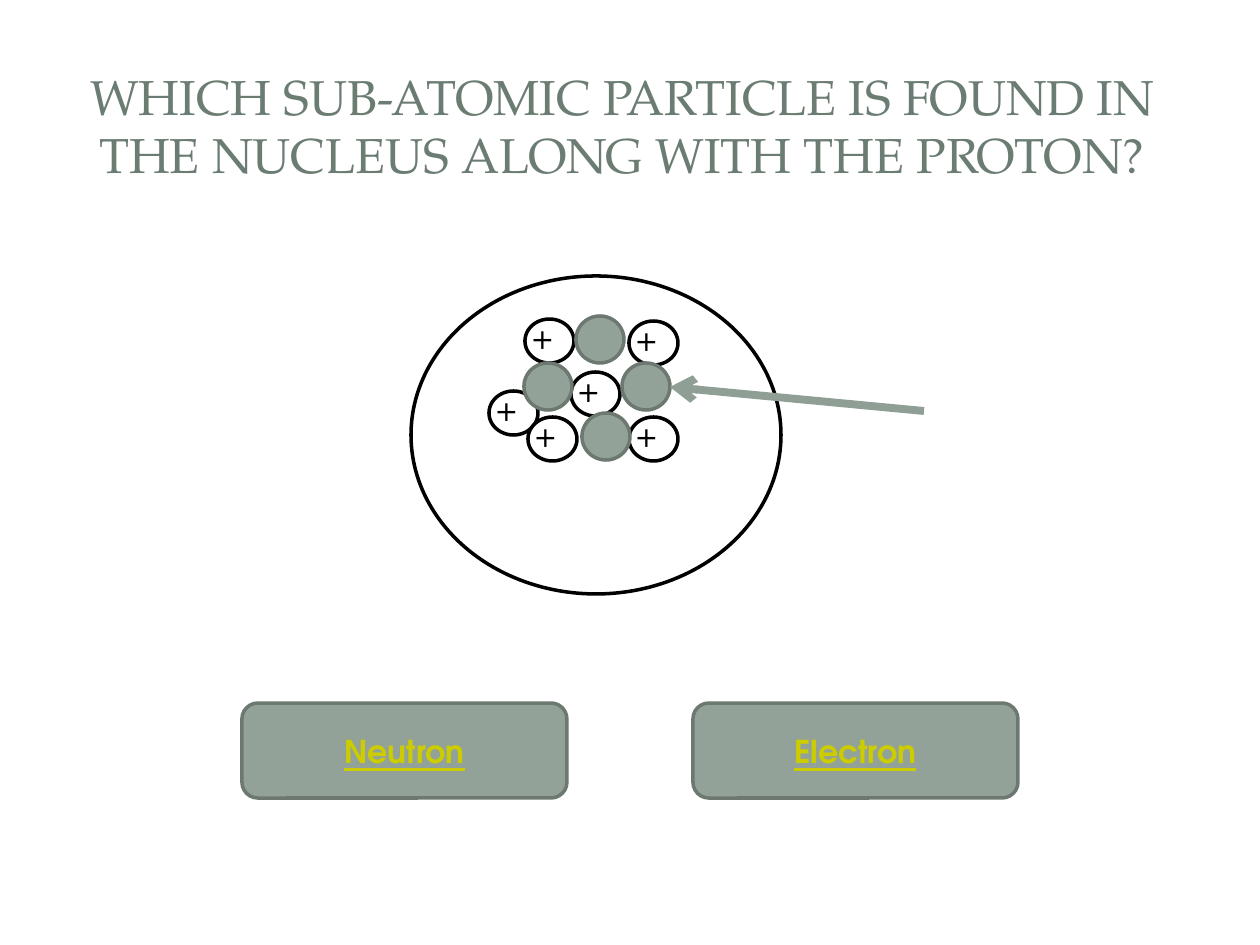
from pptx import Presentation
from pptx.dml.color import RGBColor as RGB
from pptx.enum.shapes import MSO_CONNECTOR as LINE, MSO_SHAPE as SHAPE
from pptx.enum.text import MSO_ANCHOR as ANCHOR, PP_ALIGN as ALIGN
from pptx.oxml.ns import qn
from pptx.util import Emu, Pt
from lxml.etree import SubElement as Sub

TITLE = "WHICH SUB-ATOMIC PARTICLE IS FOUND IN THE NUCLEUS ALONG WITH THE PROTON?"
ANSWERS = ["Neutron", "Electron"]
HEAD, BODY = "TeX Gyre Pagella", "TeX Gyre Adventor"
COLORS = {"white": "FFFFFF", "black": "000000", "title": "6B7D72", "sage": "93A299",
          "edge": "6D7871", "arrow": "8F9F96", "link": "CCCC00"}

# All lengths are px, 126 to the inch
ATOM = (411, 276, 370, 318)
PROTON = (49, 44)
PROTONS = [(571, 372), (629, 417), (489, 391), (528, 417), (629, 321), (525, 319)]
NEUTRON = (48, 47)
NEUTRONS = [(622, 363), (524, 363), (576, 316), (582, 413)]
ARROW = (924, 411, 670, 387)
BUTTON = (325, 95)
LEFT, TOP, STEP = 242, 703, 451


def px(n):
    return Emu(n * 914400 // 126)


def tint(color):
    return RGB.from_string(COLORS[color])


def write(shape, text, font=BODY, size=18, color="black", bold=False, under=False,
          wrap=True, pad=(13, 6, 13, 6)):
    """Set centred text; pad is left, top, right, bottom in px."""
    frame = shape.text_frame
    frame.word_wrap = wrap
    frame.vertical_anchor = ANCHOR.MIDDLE
    (frame.margin_left, frame.margin_top,
     frame.margin_right, frame.margin_bottom) = map(px, pad)
    para = frame.paragraphs[0]
    para.alignment = ALIGN.CENTER
    run = para.add_run()
    run.text = text
    look = run.font
    look.name, look.size = font, Pt(size)
    look.bold, look.underline = bold, under
    look.color.rgb = tint(color)


def draw(shapes, kind, box, fill, line):
    shape = shapes.add_shape(kind, *map(px, box))
    shape.shadow.inherit = False
    shape.fill.solid()
    shape.fill.fore_color.rgb = tint(fill)
    shape.line.color.rgb = tint(line)
    shape.line.width = Pt(2)
    return shape


def point(shapes, ends):
    """Draw the arrow with an open head at its second end."""
    arrow = shapes.add_connector(LINE.STRAIGHT, *map(px, ends))
    arrow.line.color.rgb = tint("arrow")
    arrow.line.width = Pt(4.5)
    Sub(arrow.line._get_or_add_ln(), qn("a:tailEnd"), type="arrow")
    Sub(arrow._element.spPr, qn("a:effectLst"))


def main():
    deck = Presentation()
    deck.slide_width, deck.slide_height = px(1260), px(945)
    slide = deck.slides.add_slide(deck.slide_layouts[5])
    shapes = slide.shapes

    title = shapes.title
    title.left, title.top, title.width, title.height = map(px, (53, 53, 1138, 144))
    write(title, TITLE, font=HEAD, size=28, color="title")

    atom = shapes.add_group_shape().shapes
    draw(atom, SHAPE.OVAL, ATOM, "white", "black")
    for spot in PROTONS:
        ball = draw(atom, SHAPE.OVAL, spot + PROTON, "white", "black")
        write(ball, "+", wrap=False, pad=(0, 0, 14, 10))
    for spot in NEUTRONS:
        draw(shapes, SHAPE.OVAL, spot + NEUTRON, "sage", "edge")
    point(shapes, ARROW)

    for i, name in enumerate(ANSWERS):
        box = (LEFT + i * STEP, TOP) + BUTTON
        button = draw(shapes, SHAPE.ROUNDED_RECTANGLE, box, "sage", "edge")
        write(button, name, color="link", bold=True, under=True)

    deck.save("out.pptx")


if __name__ == "__main__":
    main()
